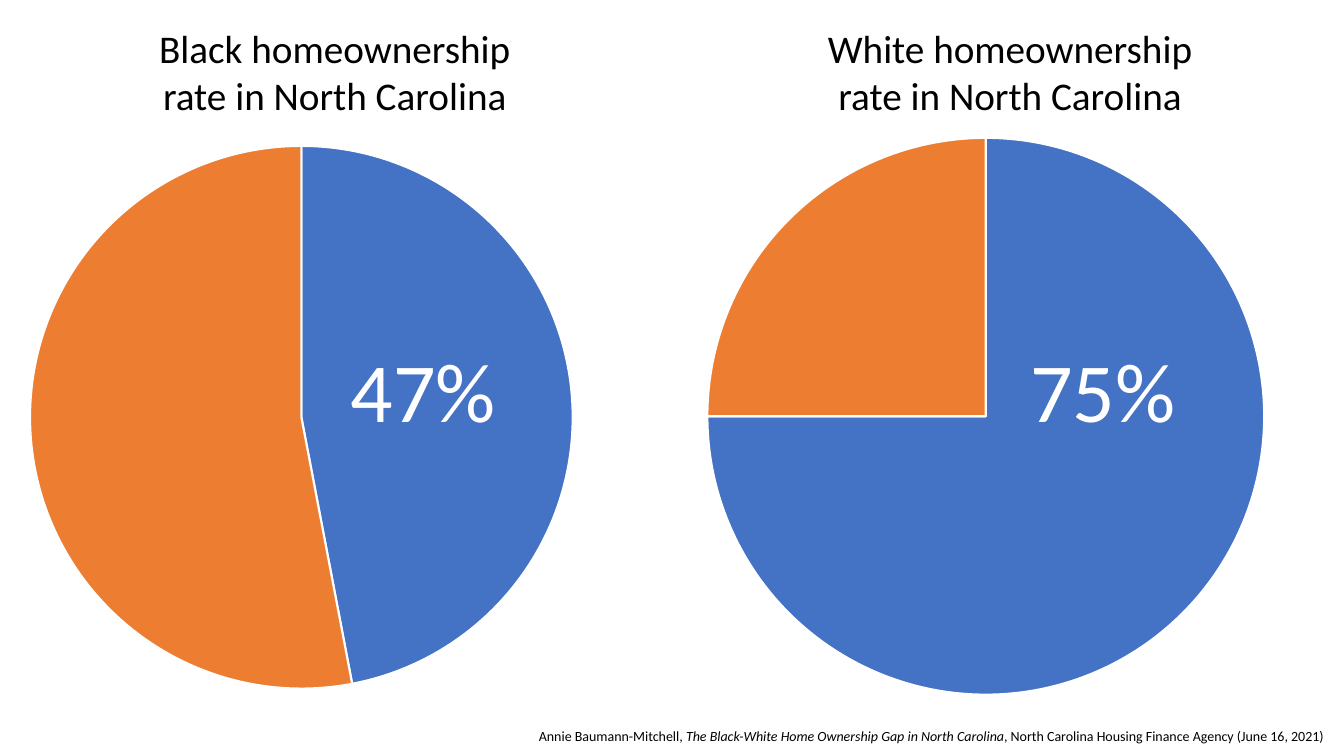
from pptx import Presentation
from pptx.chart.data import CategoryChartData
from pptx.dml.color import RGBColor
from pptx.enum import chart, text
from pptx.util import Pt

BLUE = RGBColor(0x44, 0x72, 0xC4)
ORANGE = RGBColor(0xED, 0x7D, 0x31)
GRAY = RGBColor(0xA5, 0xA5, 0xA5)
GOLD = RGBColor(0xFF, 0xC0, 0x00)
WHITE = RGBColor(0xFF, 0xFF, 0xFF)
BLACK = RGBColor(0, 0, 0)

CENTER, RIGHT = text.PP_ALIGN.CENTER, text.PP_ALIGN.RIGHT

# Group, rate, heading placeholder, heading left, label left, pie box
SIDES = [
    ("Black", 47, 1, 84.24, 237.6, (-91.44, 94.32, 613.44, 407.52)),
    ("White", 75, 3, 566.64, 722.88, (486.72, 88.56, 434.88, 417.6)),
]
SOURCE = [
    ("Annie Baumann-Mitchell, ", False),
    ("The Black-White Home Ownership Gap in North Carolina", True),
    (", North Carolina Housing Finance Agency (June 16, 2021) ", False),
]


def style(font, size, color, **extra):
    values = {"name": "Calibri", "size": Pt(size), "bold": False, **extra}
    for name, value in values.items():
        setattr(font, name, value)
    font.color.rgb = color


def place(shape, *box):
    for name, value in zip(("left", "top", "width", "height"), box):
        setattr(shape, name, Pt(value))


def write(shape, runs, size, color, align):
    frame = shape.text_frame
    values = {"word_wrap": True, "auto_size": text.MSO_AUTO_SIZE.NONE,
              "vertical_anchor": text.MSO_ANCHOR.TOP}
    for name, value in values.items():
        setattr(frame, name, value)
    para = frame.paragraphs[0]
    para.alignment = align
    para.space_before = Pt(0)
    for words, italic in runs:
        run = para.add_run()
        run.text = words
        style(run.font, size, color, italic=italic)


def add_text(slide, box, runs, size, color, align):
    shape = slide.shapes.add_textbox(*map(Pt, box))
    write(shape, runs, size, color, align)


def add_pie(slide, box, rate):
    data = CategoryChartData()
    data.categories = ["1", "2", "3", "4"]
    data.add_series("Series 1", (rate, 100 - rate, None, None))
    pie = slide.shapes.add_chart(
        chart.XL_CHART_TYPE.PIE, *map(Pt, box), data).chart
    pie.has_title = pie.has_legend = False
    style(pie.font, 10, BLACK)
    plot = pie.plots[0]
    plot.vary_by_categories = True
    for index, color in enumerate((BLUE, ORANGE, GRAY, GOLD)):
        slice_ = plot.series[0].points[index].format
        slice_.fill.solid()
        slice_.fill.fore_color.rgb = color
        slice_.line.color.rgb = WHITE
        slice_.line.width = Pt(1.5)


def main():
    deck = Presentation()
    deck.slide_width, deck.slide_height = Pt(960), Pt(540)
    slide = deck.slides.add_slide(deck.slide_layouts[4])
    holders = {h.placeholder_format.idx: h for h in slide.placeholders}

    # Each side: heading, pie and its rate
    for group, rate, idx, head, label, box in SIDES:
        holder = holders.pop(idx)
        place(holder, head, 13.68, 309.6, 74.88)
        title = f"{group} homeownership rate in North Carolina"
        write(holder, [(title, False)], 28, BLACK, CENTER)
        add_pie(slide, box, rate)
        add_text(slide, (label, 238.32, 129.6, 79.92),
                 [(f"{rate}%", False)], 60, WHITE, CENTER)

    # Source line
    add_text(slide, (355.68, 516.24, 599.04, 19.44), SOURCE, 10, BLACK, RIGHT)

    # Unused placeholders
    for holder in holders.values():
        holder.element.getparent().remove(holder.element)

    deck.save("out.pptx")


if __name__ == "__main__":
    main()
